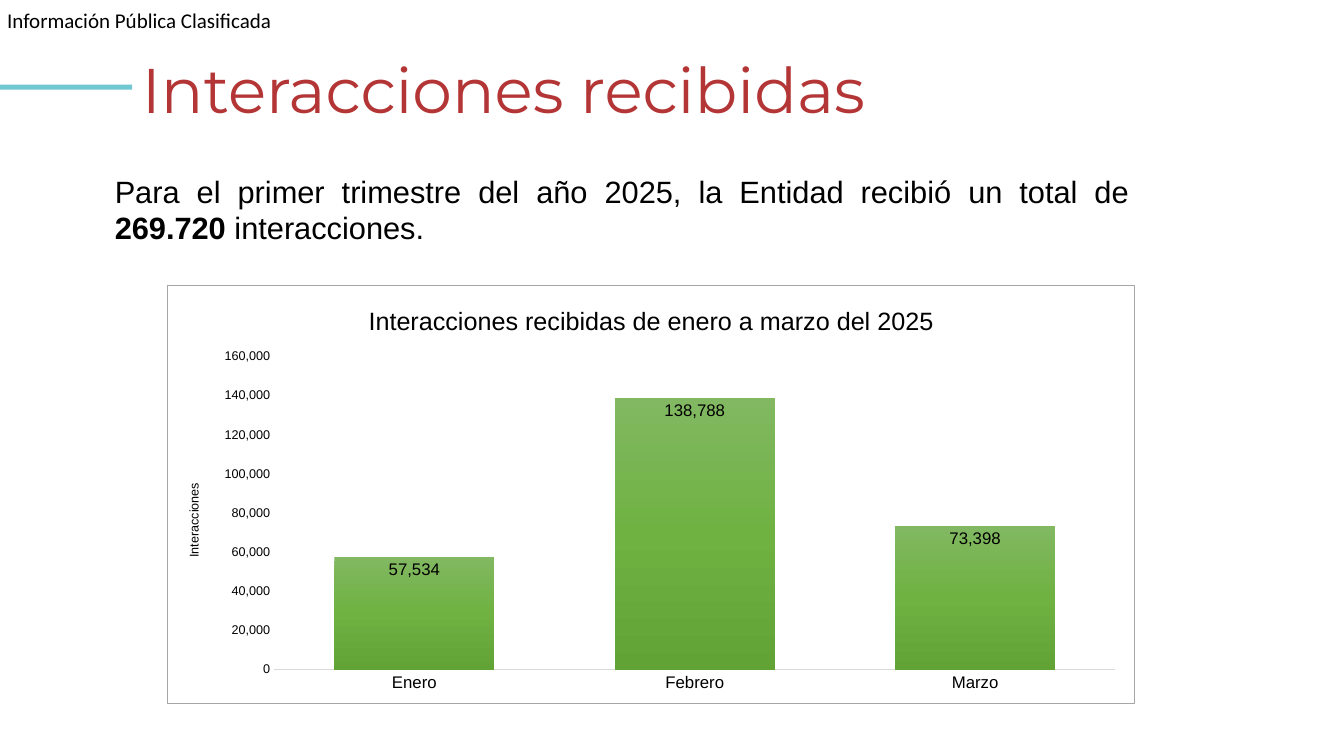
import pptx
import pptx.chart.data
import pptx.dml.color
import pptx.enum.chart
import pptx.enum.shapes
import pptx.enum.text
import pptx.oxml
import pptx.util

CHART = pptx.enum.chart
ALIGN = pptx.enum.text.PP_ALIGN
SPACE = ('xmlns:c="http://schemas.openxmlformats.org/drawingml/2006/chart" '
         'xmlns:a="http://schemas.openxmlformats.org/drawingml/2006/main"')


def px(num):
    """Turn px, 100 to the inch, into EMU."""
    return pptx.util.Emu(num * 9144)


def color(code):
    return pptx.dml.color.RGBColor.from_string(code)


def style(item, form):
    for key, value in form.items():
        setattr(item, key, value)


def type_font(font, name, size, code="000000", bold=False):
    style(font, {"name": name, "size": pptx.util.Pt(size), "bold": bold})
    font.color.rgb = color(code)


def add_text(slide, box, runs, name, size, code="000000", inset=(10, 5),
             form=None):
    """Add one paragraph made of (text, bold) runs."""
    frame = slide.shapes.add_textbox(*map(px, box)).text_frame
    side, top = map(px, inset)
    style(frame, {"word_wrap": True, "margin_left": side, "margin_right": side,
                  "margin_top": top, "margin_bottom": top})
    para = frame.paragraphs[0]
    style(para, form or {})
    for text, bold in runs:
        run = para.add_run()
        run.text = text
        type_font(run.font, name, size, code, bold)


def add_bar(slide, box, code):
    bar = slide.shapes.add_shape(pptx.enum.shapes.MSO_SHAPE.RECTANGLE,
                                 *map(px, box))
    bar.shadow.inherit = False
    bar.fill.solid()
    bar.fill.fore_color.rgb = color(code)
    bar.line.fill.background()


def add_title(owner, text, size):
    frame = owner.text_frame
    frame.text = text
    type_font(frame.paragraphs[0].runs[0].font, "Arial", size)


def shade(fill, codes):
    """Fill from top to bottom with evenly spaced colours."""
    fill.gradient()
    fill.gradient_angle = 270
    stops = fill.gradient_stops._gsLst
    for stop in list(stops):
        stops.remove(stop)
    for num, code in enumerate(codes):
        place = 100000 * num // (len(codes) - 1)
        stops.append(pptx.oxml.parse_xml(
            f'<a:gs {SPACE} pos="{place}"><a:srgbClr val="{code}"/></a:gs>'))


def frame_chart(chart, fill, line):
    chart._chartSpace.chart.addnext(pptx.oxml.parse_xml(
        f'<c:spPr {SPACE}><a:solidFill><a:srgbClr val="{fill}"/></a:solidFill>'
        f'<a:ln w="9525"><a:solidFill><a:srgbClr val="{line}"/></a:solidFill>'
        '</a:ln></c:spPr>'))


def place_plot(chart, **parts):
    """Set the inner plot area as shares of the chart."""
    area = chart._chartSpace.chart.plotArea
    for old in area.findall(pptx.oxml.ns.qn("c:layout")):
        area.remove(old)
    sizes = "".join(f'<c:{key} val="{value}"/>' for key, value in parts.items())
    area.insert(0, pptx.oxml.parse_xml(
        f'<c:layout {SPACE}><c:manualLayout><c:layoutTarget val="inner"/>'
        f'<c:xMode val="edge"/><c:yMode val="edge"/>{sizes}'
        '</c:manualLayout></c:layout>'))


def add_columns(slide, box, title, label, months, counts):
    data = pptx.chart.data.CategoryChartData(number_format="#,##0")
    data.categories = months
    data.add_series("Interacciones", counts)
    chart = slide.shapes.add_chart(CHART.XL_CHART_TYPE.COLUMN_CLUSTERED,
                                   *map(px, box), data).chart
    type_font(chart.font, "Arial", 10)
    chart.has_legend = False
    add_title(chart.chart_title, title, 18)
    frame_chart(chart, "FFFFFF", "A6A6A6")
    place_plot(chart, x=0.11, y=0.17, w=0.87, h=0.75)

    for axis, size in ((chart.category_axis, 12), (chart.value_axis, 9)):
        style(axis, {"major_tick_mark": CHART.XL_TICK_MARK.NONE,
                     "minor_tick_mark": CHART.XL_TICK_MARK.NONE,
                     "has_major_gridlines": False})
        type_font(axis.tick_labels.font, "Arial", size)
    base = chart.category_axis.format.line
    base.color.rgb = color("D9D9D9")
    base.width = pptx.util.Pt(1)
    scale = chart.value_axis
    style(scale, {"minimum_scale": 0, "maximum_scale": 160000,
                  "major_unit": 20000})
    scale.format.line.fill.background()
    style(scale.tick_labels, {"number_format": "#,##0",
                              "number_format_is_linked": False})
    add_title(scale.axis_title, label, 9)

    plot = chart.plots[0]
    style(plot, {"gap_width": 75, "overlap": 40, "vary_by_categories": False,
                 "has_data_labels": True})
    shade(plot.series[0].format.fill, ("81B861", "6FB242", "62A336"))
    marks = plot.data_labels
    style(marks, {"show_value": True, "number_format": "#,##0",
                  "number_format_is_linked": False,
                  "position": CHART.XL_LABEL_POSITION.INSIDE_END})
    type_font(marks.font, "Arial", 12)


def main():
    deck = pptx.Presentation()
    style(deck, {"slide_width": px(1333), "slide_height": px(750)})
    slide = deck.slides.add_slide(deck.slide_layouts[6])
    add_text(slide, (7, 7, 268, 25), [("Información Pública Clasificada", False)],
             "Calibri", 15, inset=(0, 0))
    add_bar(slide, (0, 84, 131, 5), "6FC8D2")
    add_text(slide, (131, 49, 843, 82), [("Interacciones recibidas", False)],
             "Montserrat", 45, "B43535",
             form={"line_spacing": pptx.util.Pt(51)})
    add_text(slide, (104, 166, 1026, 84),
             [("Para el primer trimestre del año 2025, la Entidad recibió "
               "un total de ", False),
              ("269.720", True), (" interacciones.", False)],
             "Arial", 22, form={"alignment": ALIGN.JUSTIFY})
    add_columns(slide, (166, 283, 960, 415),
                "Interacciones recibidas de enero a marzo del 2025",
                "Interacciones", ("Enero", "Febrero", "Marzo"),
                (57534, 138788, 73398))
    deck.save("out.pptx")


if __name__ == "__main__":
    main()
